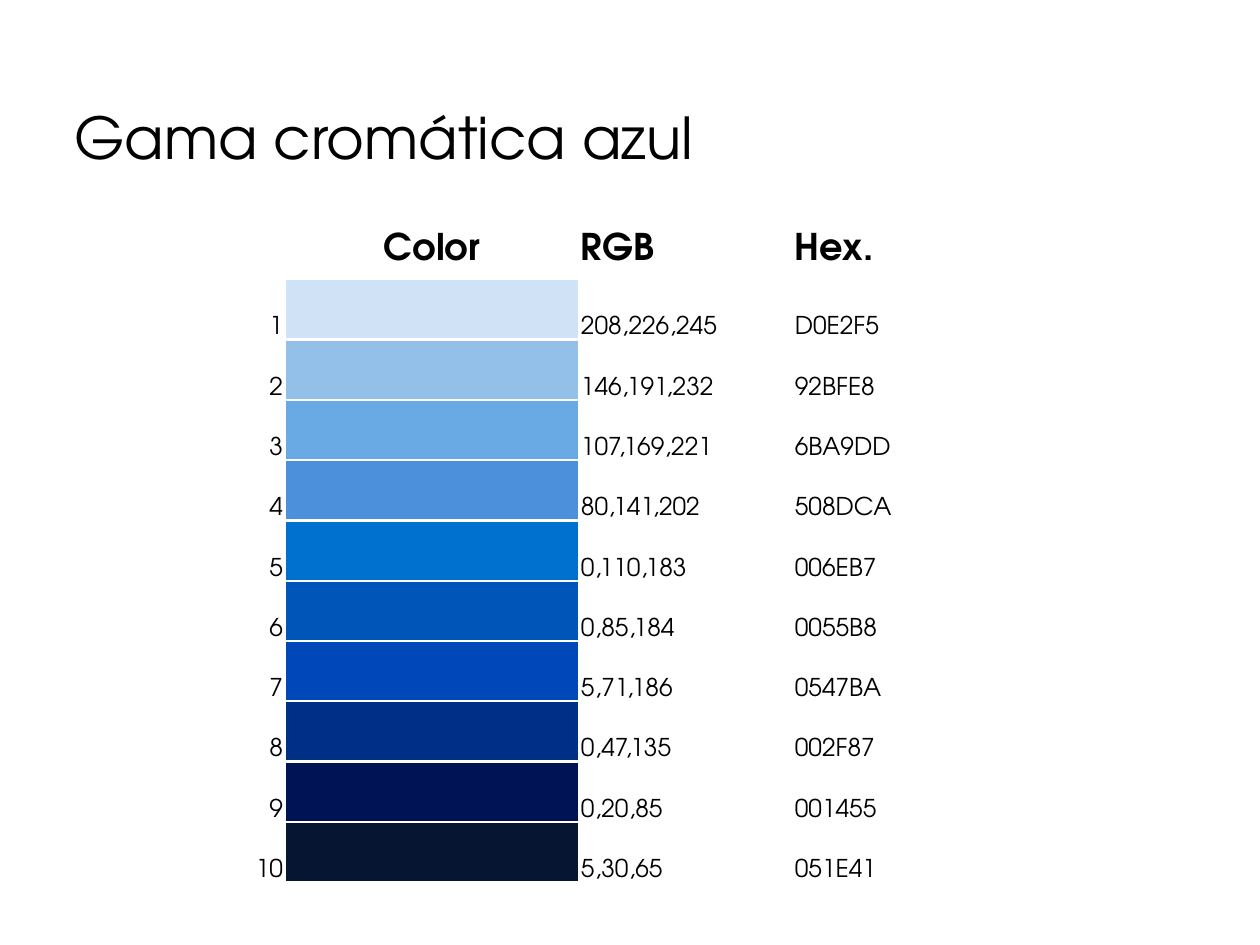
from typing import NamedTuple

from lxml import etree
from pptx import Presentation
from pptx import util as u
from pptx.dml.color import RGBColor
from pptx.enum import text
from pptx.oxml import ns

EMU_PER_PX = 914400 / 126
FONT = "TeX Gyre Adventor"
COLORS = {"text": "000000", "rule": "FFFFFF"}
HEADINGS = ("", "Color", "RGB", "Hex.")
COLUMN_WIDTHS = (78, 294, 214, 165)
TABLE_LEFT, TABLE_TOP, TABLE_HEIGHT = 207, 219, 663
SWATCH_COLUMN = 1


class Shade(NamedTuple):
    fill: str
    rgb: str
    code: str


SHADES = (
    Shade("D0E2F5", "208,226,245", "D0E2F5"),
    Shade("92C0E9", "146,191,232", "92BFE8"),
    Shade("6AAAE4", "107,169,221", "6BA9DD"),
    Shade("4C8FDA", "80,141,202", "508DCA"),
    Shade("0071CE", "0,110,183", "006EB7"),
    Shade("0055B8", "0,85,184", "0055B8"),
    Shade("0047BA", "5,71,186", "0547BA"),
    Shade("002F87", "0,47,135", "002F87"),
    Shade("001455", "0,20,85", "001455"),
    Shade("061531", "5,30,65", "051E41"),
)


def px(length: int) -> u.Emu:
    return u.Emu(round(length * EMU_PER_PX))


def add_text(paragraph, words: str, size: int, align, bold: bool = False) -> None:
    paragraph.alignment = align
    run = paragraph.add_run()
    run.text = words
    run.font.name = FONT
    run.font.size = u.Pt(size)
    run.font.bold = bold
    run.font.color.rgb = RGBColor.from_string(COLORS["text"])


def add_rule(cell, side: str) -> None:
    """Draw a white cell border; side is lnT or lnB."""
    properties = cell._tc.get_or_add_tcPr()
    line = etree.SubElement(properties, ns.qn(f"a:{side}"), w=str(u.Pt(1.5)))
    fill = etree.SubElement(line, ns.qn("a:solidFill"))
    etree.SubElement(fill, ns.qn("a:srgbClr"), val=COLORS["rule"])


def format_cell(cell, anchor, fill: str = "") -> None:
    cell.margin_left = cell.margin_right = cell.margin_top = px(2)
    cell.margin_bottom = 0
    cell.vertical_anchor = anchor
    if fill:
        cell.fill.solid()
        cell.fill.fore_color.rgb = RGBColor.from_string(fill)
    else:
        cell.fill.background()


def add_title(slide, words: str) -> None:
    title = slide.shapes.title
    title.left, title.top, title.width, title.height = px(62), px(63), px(700), px(156)
    frame = title.text_frame
    frame.word_wrap = True
    frame.auto_size = text.MSO_AUTO_SIZE.NONE
    frame.vertical_anchor = text.MSO_ANCHOR.MIDDLE
    frame.paragraphs[0].line_spacing = 0.9
    add_text(frame.paragraphs[0], words, 33, text.PP_ALIGN.LEFT)


def add_shade_table(slide) -> None:
    row_count = len(SHADES) + 1
    table = slide.shapes.add_table(
        row_count, len(HEADINGS), px(TABLE_LEFT), px(TABLE_TOP),
        px(sum(COLUMN_WIDTHS)), px(TABLE_HEIGHT)).table
    table.first_row = table.horz_banding = False
    for column, width in zip(table.columns, COLUMN_WIDTHS):
        column.width = px(width)
    for row in table.rows:
        row.height = px(TABLE_HEIGHT) // row_count

    # Headings
    for index, heading in enumerate(HEADINGS):
        cell = table.cell(0, index)
        is_swatch = index == SWATCH_COLUMN
        if is_swatch:
            add_rule(cell, "lnB")
        format_cell(cell, text.MSO_ANCHOR.MIDDLE)
        if heading:
            align = text.PP_ALIGN.CENTER if is_swatch else text.PP_ALIGN.LEFT
            add_text(cell.text_frame.paragraphs[0], heading, 21, align, bold=True)

    # One row per shade: number, swatch, RGB and hex values
    for number, shade in enumerate(SHADES, start=1):
        for index, words in enumerate((str(number), "", shade.rgb, shade.code)):
            cell = table.cell(number, index)
            if index == SWATCH_COLUMN:
                add_rule(cell, "lnT")
                add_rule(cell, "lnB")
                format_cell(cell, text.MSO_ANCHOR.BOTTOM, shade.fill)
                continue
            format_cell(cell, text.MSO_ANCHOR.BOTTOM)
            align = text.PP_ALIGN.RIGHT if index == 0 else text.PP_ALIGN.LEFT
            add_text(cell.text_frame.paragraphs[0], words, 14, align)


def main() -> None:
    presentation = Presentation()
    presentation.slide_width, presentation.slide_height = px(1260), px(945)
    slide = presentation.slides.add_slide(presentation.slide_layouts[5])
    add_title(slide, "Gama cromática azul")
    add_shade_table(slide)
    presentation.save("out.pptx")


if __name__ == "__main__":
    main()
